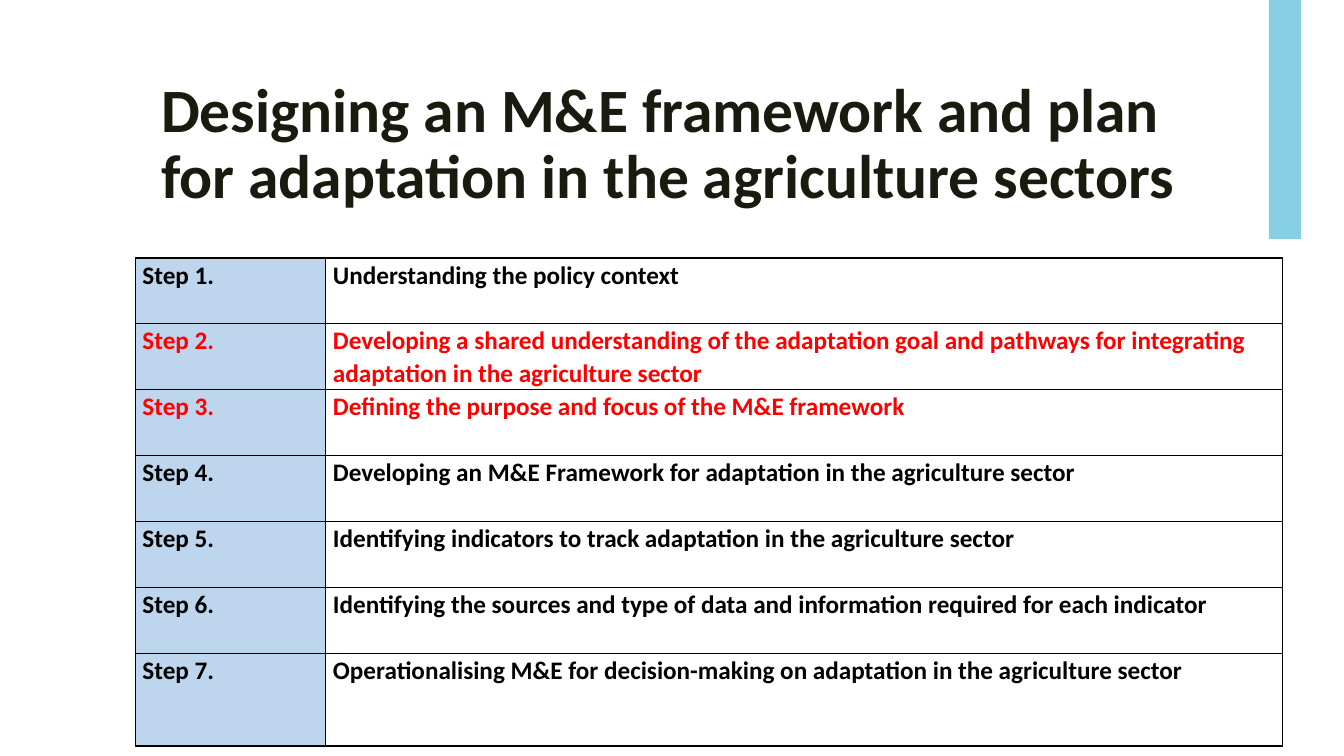
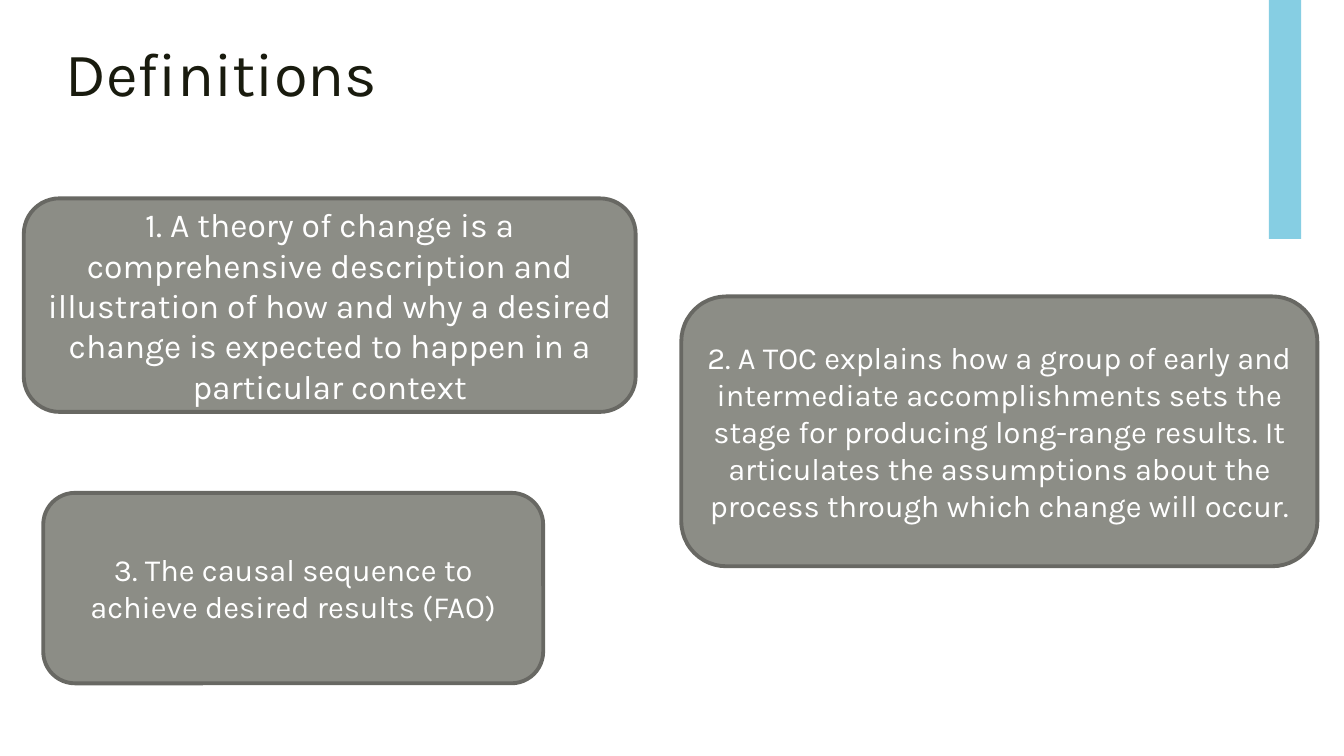
from lxml import etree
from pptx import Presentation
from pptx import util as u
from pptx.dml.color import RGBColor
from pptx.enum import shapes, text
from pptx.oxml import ns

INK = RGBColor(0x19, 0x1B, 0x0E)
BLACK = RGBColor(0, 0, 0)
WHITE = RGBColor(0xFF, 0xFF, 0xFF)
RED = RGBColor(0xFF, 0, 0)
SKY = RGBColor(0x86, 0xCE, 0xE3)
PALE_BLUE = RGBColor(0xBD, 0xD6, 0xEE)
GREY = RGBColor(0x8C, 0x8D, 0x86)
DARK_GREY = RGBColor(0x68, 0x68, 0x63)
BODY_FONT = "Karla"
TABLE_FONT = "Calibri"

STEPS = [
    "Understanding the policy context",
    "Developing a shared understanding of the adaptation goal and pathways "
    "for integrating adaptation in the agriculture sector",
    "Defining the purpose and focus of the M&E framework",
    "Developing an M&E Framework for adaptation in the agriculture sector",
    "Identifying indicators to track adaptation in the agriculture sector",
    "Identifying the sources and type of data and information required for each indicator",
    "Operationalising M&E for decision-making on adaptation in the agriculture sector",
]
CURRENT_STEPS = {2, 3}

DEFINITIONS = [
    ((0.6, 5.0, 15.42, 5.38), 24,
     "1. A theory of change is a comprehensive description and illustration of how "
     "and why a desired change is expected to happen in a particular context"),
    ((17.17, 7.47, 16.03, 6.8), 22,
     "2. A TOC explains how a group of early and intermediate accomplishments sets "
     "the stage for producing long-range results. It articulates the assumptions "
     "about the process through which change will occur."),
    ((1.09, 12.42, 12.6, 4.8), 22,
     "3. The causal sequence to achieve desired results (FAO)"),
]


class SlideMaker:
    def __init__(self):
        self.deck = Presentation()
        self.deck.slide_width = u.Cm(33.87)
        self.deck.slide_height = u.Cm(19.05)
        self.page = None

    def new_page(self):
        self.page = self.deck.slides.add_slide(self.deck.slide_layouts[6])
        band = self.shape(shapes.MSO_SHAPE.RECTANGLE, (31.98, 0, 0.81, 6.02), SKY)
        band.line.fill.background()

    def shape(self, kind, place, fill):
        shape = self.page.shapes.add_shape(kind, *map(u.Cm, place))
        shape.shadow.inherit = False
        shape.fill.solid()
        shape.fill.fore_color.rgb = fill
        return shape

    def set_text(self, frame, words, size, colour, font, bold=False, spacing=None, align=None):
        frame.text = words
        frame.word_wrap = True
        para = frame.paragraphs[0]
        para.line_spacing = spacing
        para.alignment = align
        span = para.runs[0]
        span.font.name = font
        span.font.size = u.Pt(size)
        span.font.bold = bold
        span.font.color.rgb = colour

    def title(self, words, place, font, bold=False):
        box = self.page.shapes.add_textbox(*map(u.Cm, place))
        self.set_text(box.text_frame, words, 44, INK, font, bold, spacing=0.89)

    def definition(self, words, place, size):
        card = self.shape(shapes.MSO_SHAPE.ROUNDED_RECTANGLE, place, GREY)
        card.line.color.rgb = DARK_GREY
        card.line.width = u.Pt(2.75)
        card.text_frame.vertical_anchor = text.MSO_ANCHOR.MIDDLE
        self.set_text(card.text_frame, words, size, WHITE, BODY_FONT,
                      align=text.PP_ALIGN.CENTER)

    def cell(self, cell, words, colour, fill):
        cell.margin_left = cell.margin_right = u.Cm(0.18)
        cell.margin_top = cell.margin_bottom = 0
        self.set_text(cell.text_frame, words, 18, colour, TABLE_FONT, True, spacing=1.07)
        properties = cell._tc.get_or_add_tcPr()
        for side in ("lnL", "lnR", "lnT", "lnB"):
            border = etree.SubElement(properties, ns.qn(f"a:{side}"), w=str(u.Pt(1)))
            paint = etree.SubElement(border, ns.qn("a:solidFill"))
            etree.SubElement(paint, ns.qn("a:srgbClr"), val=str(BLACK))
        cell.fill.solid()
        cell.fill.fore_color.rgb = fill

    def step_table(self, steps, place, label_width, row_height, last_height):
        table = self.page.shapes.add_table(len(steps), 2, *map(u.Cm, place)).table
        table.first_row = table.horz_banding = False
        table.columns[0].width = u.Cm(label_width)
        table.columns[1].width = u.Cm(place[2] - label_width)
        for number, step in enumerate(steps, 1):
            height = last_height if number == len(steps) else row_height
            table.rows[number - 1].height = u.Cm(height)
            colour = RED if number in CURRENT_STEPS else BLACK
            self.cell(table.cell(number - 1, 0), f"Step {number}.", colour, PALE_BLUE)
            self.cell(table.cell(number - 1, 1), step, colour, WHITE)


def main():
    maker = SlideMaker()

    maker.new_page()
    maker.title("Designing an M&E framework and plan for adaptation in the agriculture sectors",
                (3.81, 1.9, 26.67, 4.12), TABLE_FONT, bold=True)
    maker.step_table(STEPS, (3.41, 6.5, 28.9, 12.3), 4.8, 1.66, 2.34)

    maker.new_page()
    maker.title("Definitions", (1.4, 0.99, 26.67, 2), BODY_FONT)
    for place, size, words in DEFINITIONS:
        maker.definition(words, place, size)

    maker.deck.save("out.pptx")


if __name__ == "__main__":
    main()
